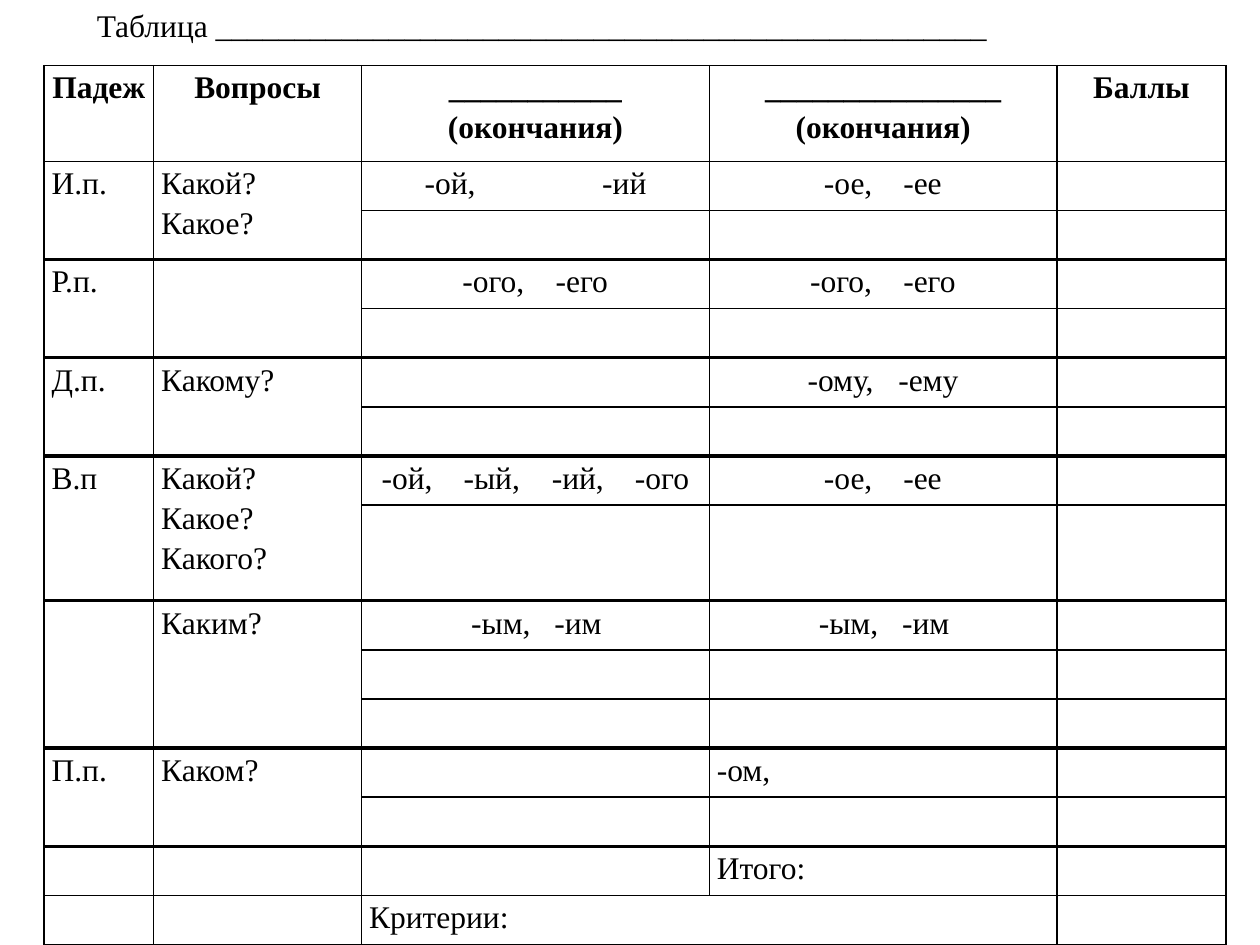
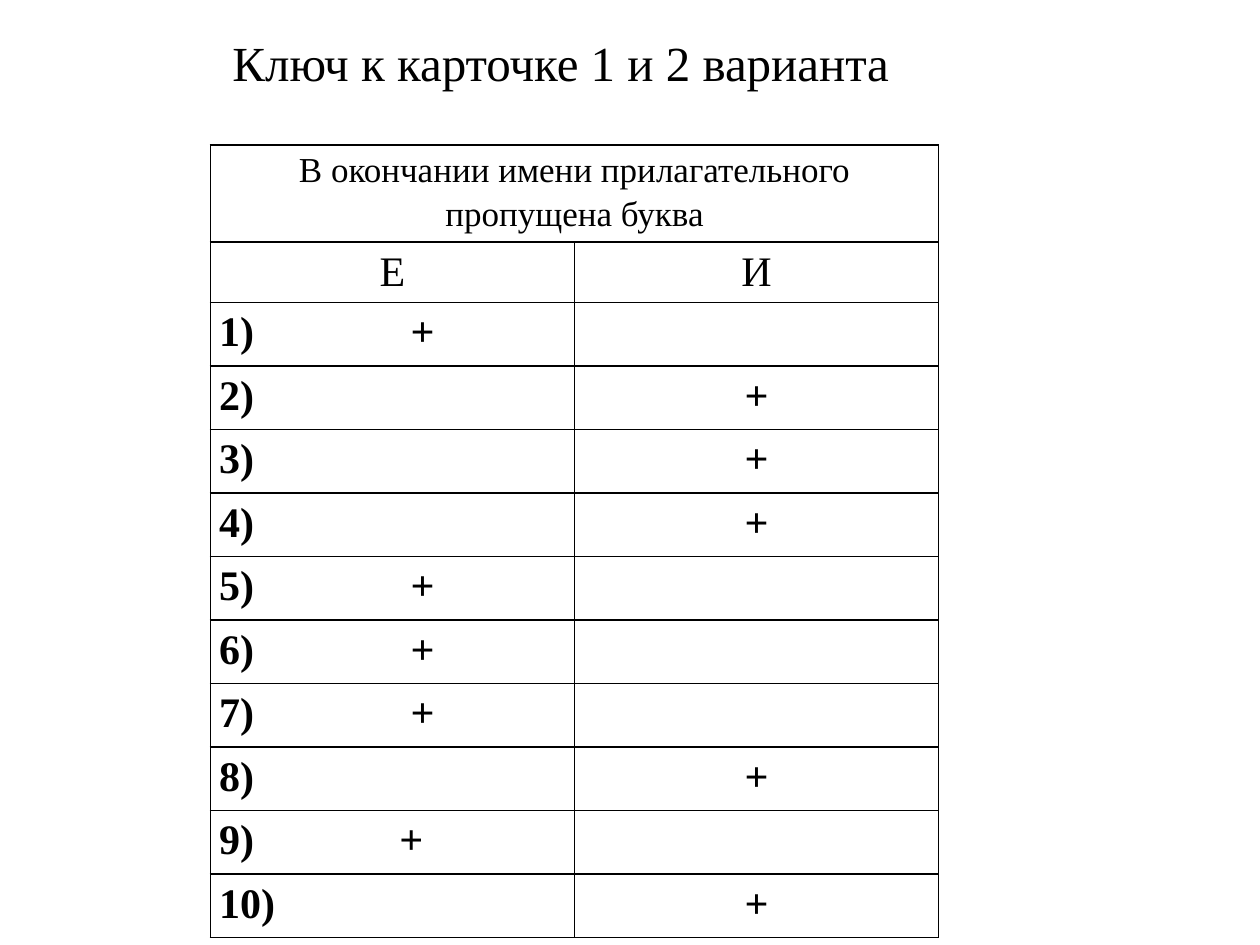
import lxml.etree
import pptx
import pptx.dml.color
import pptx.enum.text
import pptx.oxml.ns
import pptx.util

Inches = pptx.util.Inches
LEFT = pptx.enum.text.PP_ALIGN.LEFT
CENTER = pptx.enum.text.PP_ALIGN.CENTER
BLACK = pptx.dml.color.RGBColor(0x00, 0x00, 0x00)
WHITE = pptx.dml.color.RGBColor(0xFF, 0xFF, 0xFF)
FONT = "Times New Roman"
THIN, THICK = 1, 2.25

HEADINGS = ["Падеж", "Вопросы", "___________ (окончания)",
            "_______________\n(окончания)", "Баллы"]
CASES = [
    ("И.п.", "Какой?\nКакое?", ("-ой,", "-ий"), ("-ое,", "-ее"), 2),
    ("Р.п.", "", ("-ого,", "-его"), ("-ого,", "-его"), 2),
    ("Д.п.", "Какому?", (), ("-ому,", "-ему"), 2),
    ("В.п", "Какой?\nКакое?\nКакого?", ("-ой,", "-ый,", "-ий,", "-ого"), ("-ое,", "-ее"), 2),
    ("", "Каким?", ("-ым,", "-им"), ("-ым,", "-им"), 3),
    ("П.п.", "Каком?", (), ("-ом,",), 2),
]
ENDING_TABS = {
    ("-ой,", "-ий"): (0.44, 1.85),
    ("-ое,", "-ее"): (0.85, 1.48),
    ("-ого,", "-его"): (0.74, 1.48),
    ("-ому,", "-ему"): (0.72, 1.44),
    ("-ой,", "-ый,", "-ий,", "-ого"): (0.1, 0.75, 1.45, 2.11),
    ("-ым,", "-им"): (0.81, 1.47),
}
KEY_LETTERS = "ЕИ"
ANSWERS = "ЕИИИЕЕЕИЕИ"


def write_text(frame, text, *, size=18, bold=False, align=LEFT, spacing=None, tabs=()):
    """Fill a text frame, one paragraph for each line, with optional tab stops."""
    frame.word_wrap = True
    for index, line in enumerate(text.split("\n")):
        paragraph = frame.add_paragraph() if index else frame.paragraphs[0]
        paragraph.alignment = align
        paragraph.line_spacing = spacing
        if tabs:
            stops = lxml.etree.SubElement(paragraph._p.get_or_add_pPr(),
                                          pptx.oxml.ns.qn("a:tabLst"))
            for stop in tabs:
                lxml.etree.SubElement(stops, pptx.oxml.ns.qn("a:tab"),
                                      pos=str(Inches(stop)), algn="l")
        if line:
            run = paragraph.add_run()
            run.text = line
            run.font.name = FONT
            run.font.size = pptx.util.Pt(size)
            run.font.bold = bold
            run.font.color.rgb = BLACK


def add_title(slide, text, box, **style):
    """Place a heading in the given box."""
    heading = slide.shapes.add_textbox(*map(Inches, box))
    write_text(heading.text_frame, text, **style)


def add_grid(slide, left, top, widths, heights):
    """Add an unstyled table with the given column widths and row heights."""
    grid = slide.shapes.add_table(len(heights), len(widths), Inches(left), Inches(top),
                                  Inches(sum(widths)), Inches(sum(heights))).table
    grid.first_row = grid.horz_banding = False
    for column, width in zip(grid.columns, widths):
        column.width = Inches(width)
    for row, height in zip(grid.rows, heights):
        row.height = Inches(height)
    return grid


def rule_grid(grid, inset, thick_edges=()):
    """Give every cell its insets, fill and borders, thick at the listed row edges."""
    for row in range(len(grid.rows)):
        for column in range(len(grid.columns)):
            cell = grid.cell(row, column)
            cell.margin_left = cell.margin_right = Inches(inset)
            cell.margin_top = cell.margin_bottom = 0
            bottom = row + (cell.span_height if cell.is_merge_origin else 1)
            weights = {"L": THIN, "R": THIN,
                       "T": THICK if row in thick_edges else THIN,
                       "B": THICK if bottom in thick_edges else THIN}
            properties = cell._tc.get_or_add_tcPr()
            for side, weight in weights.items():
                line = lxml.etree.SubElement(properties, pptx.oxml.ns.qn(f"a:ln{side}"),
                                             w=str(pptx.util.Pt(weight)))
                fill = lxml.etree.SubElement(line, pptx.oxml.ns.qn("a:solidFill"))
                lxml.etree.SubElement(fill, pptx.oxml.ns.qn("a:srgbClr"), val=str(BLACK))
            cell.fill.solid()
            cell.fill.fore_color.rgb = WHITE


def write_cell(grid, row, column, text, **style):
    """Write text in one table cell with the line spacing of the tables."""
    write_text(grid.cell(row, column).text_frame, text, spacing=1.15, **style)


def write_endings(grid, row, column, endings):
    """Spread the endings of one case over tab stops."""
    tabs = ENDING_TABS.get(endings, ())
    text = "".join(f"\t{ending}" for ending in endings) if tabs else "".join(endings)
    write_cell(grid, row, column, text, tabs=tabs)


def build_case_slide(slide):
    """Build the table of cases, questions and endings."""
    heights = [0.76 if row in (0, 8) else 0.39 for row in range(16)]
    grid = add_grid(slide, 0.35, 0.52, [0.87, 1.65, 2.76, 2.76, 1.34], heights)
    for column, heading in enumerate(HEADINGS):
        write_cell(grid, 0, column, heading, bold=True, align=CENTER)
    row, group_edges = 1, []
    for case, questions, masculine, neuter, span in CASES:
        for column, text in enumerate((case, questions)):
            grid.cell(row, column).merge(grid.cell(row + span - 1, column))
            write_cell(grid, row, column, text)
        write_endings(grid, row, 2, masculine)
        write_endings(grid, row, 3, neuter)
        row += span
        group_edges.append(row)
    write_cell(grid, row, 3, "Итого:")
    grid.cell(row + 1, 2).merge(grid.cell(row + 1, 3))
    write_cell(grid, row + 1, 2, "Критерии:")
    rule_grid(grid, 0.06, group_edges)
    add_title(slide, "Таблица " + "_" * 49, (0.67, 0, 7.87, 0.4))


def build_key_slide(slide):
    """Build the answer key with a plus under the missing letter."""
    header, letters, total = 0.77, 0.48, 6.29
    answer = (total - header - letters) / len(ANSWERS)
    grid = add_grid(slide, 1.67, 1.15, [2.89] * 2, [header, letters] + [answer] * len(ANSWERS))
    grid.cell(0, 0).merge(grid.cell(0, 1))
    write_cell(grid, 0, 0, "В окончании имени прилагательного пропущена буква",
               size=20, align=CENTER)
    for column, letter in enumerate(KEY_LETTERS):
        write_cell(grid, 1, column, letter, size=24, align=CENTER)
    for number, letter in enumerate(ANSWERS, 1):
        first = letter == KEY_LETTERS[0]
        write_cell(grid, number + 1, 0, f"{number})\t+" if first else f"{number})",
                   size=24, bold=True, tabs=(1.43 if number == 9 else 1.52,) if first else ())
        if not first:
            write_cell(grid, number + 1, 1, "+", size=24, bold=True, align=CENTER)
    rule_grid(grid, 0.07)
    add_title(slide, "Ключ к карточке 1 и 2 варианта", (0.67, 0.21, 7.56, 0.57),
              size=28, align=CENTER)


def main():
    """Build both slides and save the presentation."""
    deck = pptx.Presentation()
    deck.slide_width, deck.slide_height = Inches(10), Inches(7.5)
    for build in (build_case_slide, build_key_slide):
        build(deck.slides.add_slide(deck.slide_layouts[6]))
    deck.save("out.pptx")


if __name__ == "__main__":
    main()
